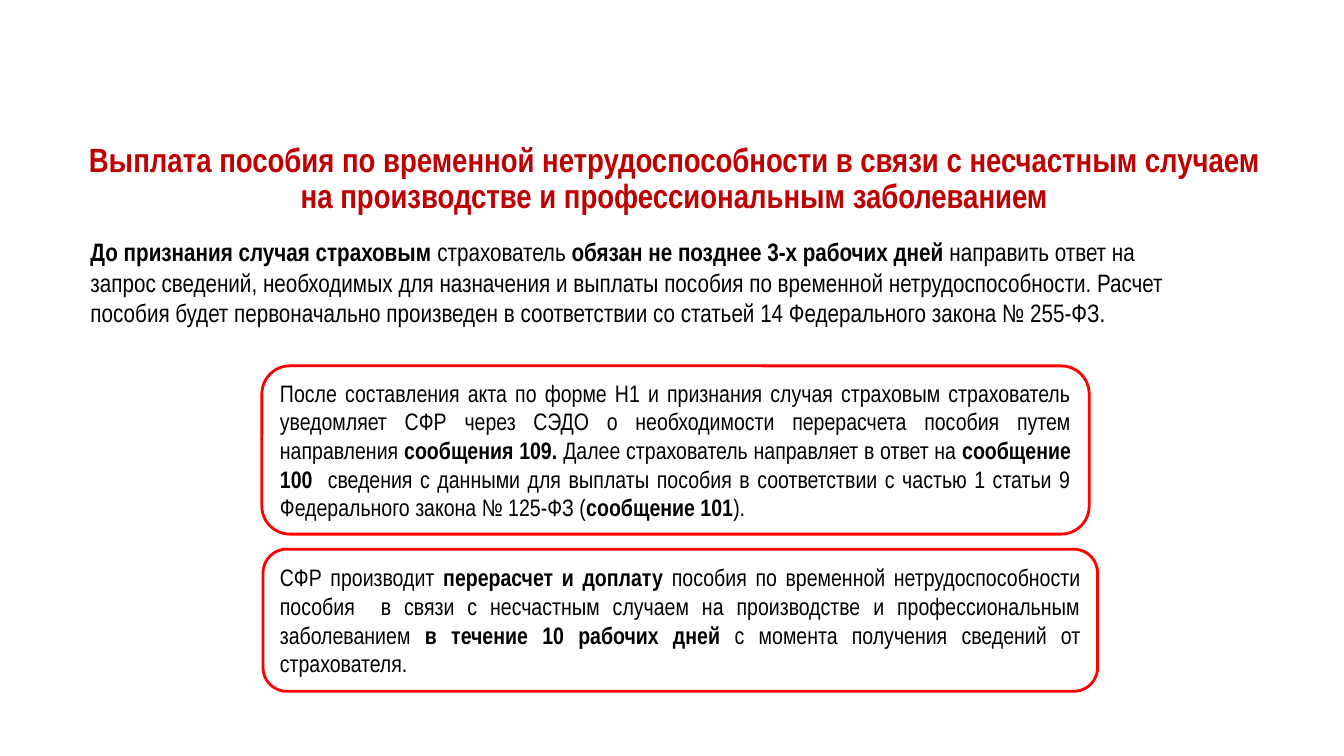
import pptx
import pptx.dml.color
import pptx.enum.shapes
import pptx.enum.text
import pptx.util

Cm = pptx.util.Cm
ALIGN = pptx.enum.text.PP_ALIGN
ANCHOR = pptx.enum.text.MSO_ANCHOR
FIT = pptx.enum.text.MSO_AUTO_SIZE

TITLE = [("Выплата пособия по временной нетрудоспособности в связи с несчастным случаем "
          "на производстве и профессиональным заболеванием", True)]
INTRO = [
    ("До признания случая страховым ", True),
    ("страхователь ", False),
    ("обязан не позднее 3-х рабочих дней ", True),
    ("направить ответ на запрос сведений, необходимых для назначения и выплаты пособия "
     "по временной нетрудоспособности. Расчет пособия будет первоначально произведен "
     "в соответствии со статьей 14 Федерального закона № 255-ФЗ.", False),
]
NOTICE = [
    ("После составления акта по форме Н1 и признания случая страховым страхователь "
     "уведомляет СФР через СЭДО о необходимости перерасчета пособия путем направления ", False),
    ("сообщения 109.", True),
    (" Далее страхователь направляет в ответ на ", False),
    ("сообщение 100  ", True),
    ("сведения с данными для выплаты пособия в соответствии с частью 1 статьи 9 "
     "Федерального закона № 125-ФЗ (", False),
    ("сообщение 101", True),
    (").", False),
]
RECALCULATION = [
    ("СФР производит ", False),
    ("перерасчет и доплату ", True),
    ("пособия по временной нетрудоспособности пособия  в связи с несчастным случаем "
     "на производстве и профессиональным заболеванием ", False),
    ("в течение 10 рабочих дней ", True),
    ("с момента получения сведений от страхователя.", False),
]


def color(value):
    """Return the RGB colour for a hex string."""
    return pptx.dml.color.RGBColor.from_string(value)


def apply(target, values):
    """Set every attribute named in a dict of format values."""
    for name, value in values.items():
        setattr(target, name, value)


def write(shape, spans, size, ink, frame_format, para_format):
    """Fill a shape with one paragraph of plain and bold spans."""
    frame = shape.text_frame
    apply(frame, {"word_wrap": True, **frame_format})
    para = frame.paragraphs[0]
    apply(para, para_format)
    for text, bold in spans:
        span = para.add_run()
        span.text = text
        apply(span.font, {"name": "Arial Narrow", "size": pptx.util.Pt(size), "bold": bold})
        span.font.color.rgb = color(ink)


def add_title(page, box):
    """Place the centred red heading in the title placeholder."""
    title = page.shapes.title
    apply(title, dict(zip(("left", "top", "width", "height"), map(Cm, box))))
    write(title, TITLE, 24, "C00000",
          {"vertical_anchor": ANCHOR.TOP, "auto_size": FIT.NONE},
          {"alignment": ALIGN.CENTER, "line_spacing": 0.9})


def add_intro(page, box):
    """Place the opening paragraph in a text box."""
    intro = page.shapes.add_textbox(*map(Cm, box))
    write(intro, INTRO, 18, "000000",
          {"auto_size": FIT.SHAPE_TO_FIT_TEXT}, {"alignment": ALIGN.LEFT})


def add_step(page, box, spans):
    """Place a red rounded outline with justified text."""
    step = page.shapes.add_shape(pptx.enum.shapes.MSO_SHAPE.ROUNDED_RECTANGLE, *map(Cm, box))
    step.shadow.inherit = False
    step.fill.background()
    step.line.color.rgb = color("FF0000")
    step.line.width = pptx.util.Pt(2)
    write(step, spans, 17, "000000",
          {"vertical_anchor": ANCHOR.MIDDLE}, {"alignment": ALIGN.JUSTIFY})


def main():
    """Build the slide and save the deck."""
    deck = pptx.Presentation()
    apply(deck, {"slide_width": Cm(33.87), "slide_height": Cm(19.05)})
    page = deck.slides.add_slide(deck.slide_layouts.get_by_name("Title Only"))
    add_title(page, (1.98, 3.48, 30.02, 3.38))
    add_intro(page, (2.03, 5.84, 28.58, 2.57))
    add_step(page, (6.6, 9.22, 20.85, 4.24), NOTICE)
    add_step(page, (6.63, 13.84, 21.03, 3.58), RECALCULATION)
    deck.save("out.pptx")


if __name__ == "__main__":
    main()
